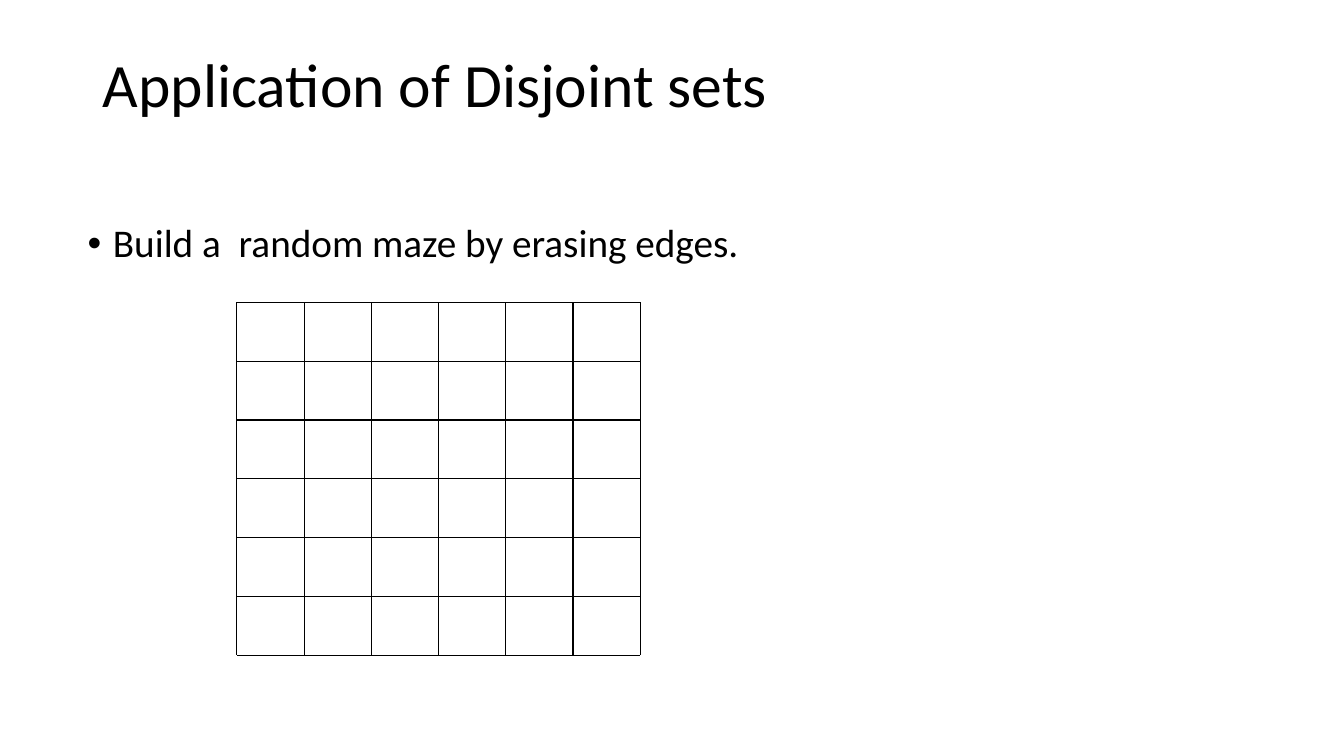
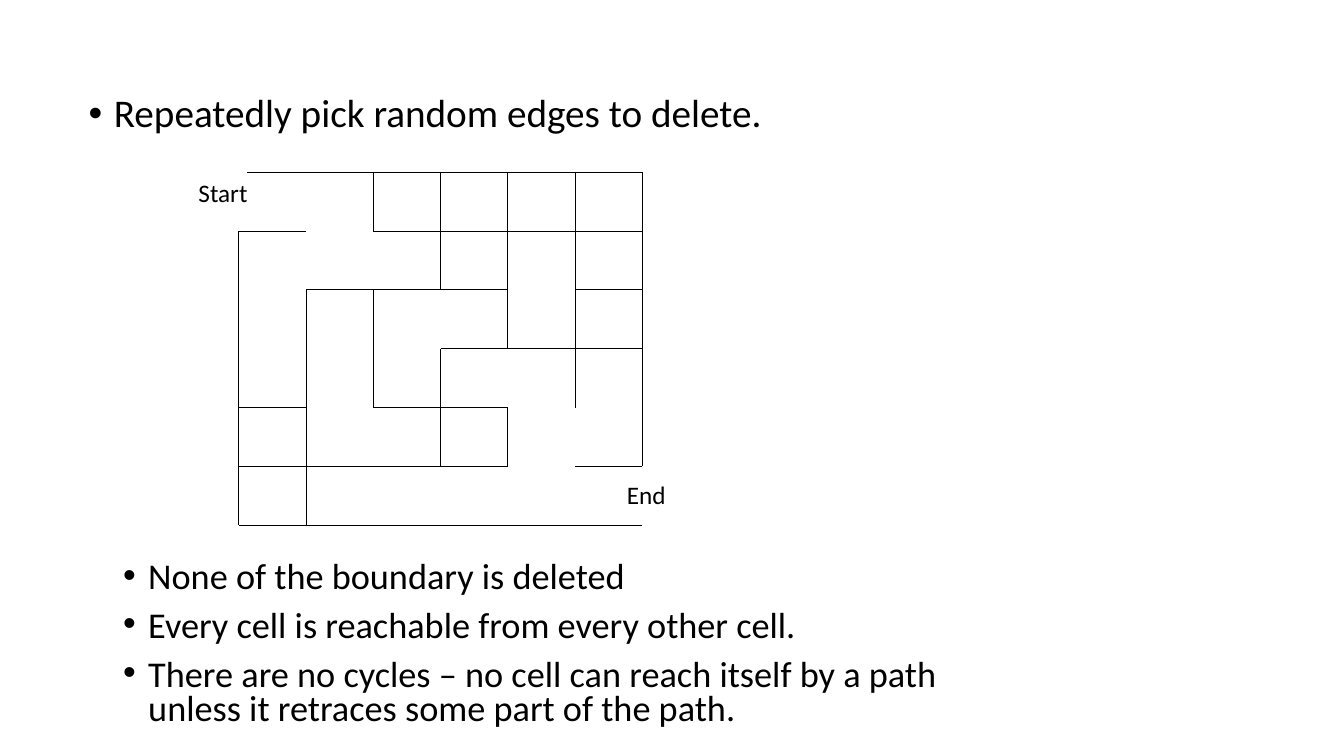
from lxml import etree
from pptx import Presentation
from pptx.dml.color import RGBColor
from pptx.enum import shapes, text
from pptx.oxml import ns
from pptx.util import Inches, Pt

BLACK = RGBColor(0, 0, 0)
FONT = "Calibri"
TITLE_AND_LIST, TWO_LISTS = 1, 3
GRID_SIZE = 6
CELL_WIDTH = 4 / GRID_SIZE
CELL_HEIGHT = 3.5 / GRID_SIZE

# T: top wall, R: right wall, B: both walls, -: no wall
FULL_GRID = ["B" * GRID_SIZE] * GRID_SIZE
MAZE = ["-BBBBB", "T-BBBB", "RBTBRB", "RRRTBB", "B-BB-R", "BTTT-T"]


class Deck:
    def __init__(self):
        self.file = Presentation()
        self.file.slide_width = Inches(13.33)
        self.file.slide_height = Inches(7.5)
        self.page = None

    def add_page(self, layout):
        self.page = self.file.slides.add_slide(self.file.slide_layouts[layout])

    def style(self, paragraph, size):
        paragraph.font.name = FONT
        paragraph.font.size = Pt(size)
        paragraph.font.color.rgb = BLACK

    def place(self, box, left, top, width, height):
        box.left, box.top = Inches(left), Inches(top)
        box.width, box.height = Inches(width), Inches(height)
        box.text_frame.auto_size = text.MSO_AUTO_SIZE.NONE

    def title(self, wording):
        box = self.page.shapes.title
        self.place(box, 0.92, 0.4, 11.5, 0.93)
        box.text_frame.text = wording
        box.text_frame.vertical_anchor = text.MSO_ANCHOR.MIDDLE
        paragraph = box.text_frame.paragraphs[0]
        paragraph.alignment = text.PP_ALIGN.LEFT
        paragraph.line_spacing = 0.9
        self.style(paragraph, 44)

    def drop_title(self):
        element = self.page.shapes.title.element
        element.getparent().remove(element)

    def bullets(self, index, items, left, top, height, size=28, spacing=0.9):
        box = self.page.placeholders[index]
        self.place(box, left, top, 8.5, height)
        box.text_frame.text = "\n".join(items)
        for number, paragraph in enumerate(box.text_frame.paragraphs):
            paragraph.line_spacing = spacing
            paragraph.space_before = Pt(10 if number else 0)
            properties = paragraph._p.get_or_add_pPr()
            properties.set("marL", str(Inches(0.25)))
            properties.set("indent", str(Inches(-0.25)))
            etree.SubElement(properties, ns.qn("a:buChar")).set("char", "•")
            self.style(paragraph, size)

    def label(self, wording, left, top, width):
        box = self.page.shapes.add_textbox(
            Inches(left), Inches(top), Inches(width), Inches(0.43))
        box.text_frame.text = wording
        box.text_frame.word_wrap = False
        box.text_frame.auto_size = text.MSO_AUTO_SIZE.SHAPE_TO_FIT_TEXT
        self.style(box.text_frame.paragraphs[0], 18)

    def line(self, start_x, start_y, end_x, end_y):
        wall = self.page.shapes.add_connector(
            shapes.MSO_CONNECTOR.STRAIGHT,
            Inches(start_x), Inches(start_y), Inches(end_x), Inches(end_y))
        wall.line.color.rgb = BLACK
        wall.line.width = Pt(0.75)
        etree.SubElement(wall._element.spPr, ns.qn("a:effectLst"))

    def walls(self, rows, left, top):
        for row, codes in enumerate(rows):
            for column, code in enumerate(codes):
                x = left + column * CELL_WIDTH
                y = top + row * CELL_HEIGHT
                right = x + CELL_WIDTH
                if code in "TB":
                    self.line(x, y, right, y)
                if code in "RB":
                    self.line(right, y, right, y + CELL_HEIGHT)

    def outline(self, left, top, open_rows=0):
        bottom = top + GRID_SIZE * CELL_HEIGHT
        self.line(left + GRID_SIZE * CELL_WIDTH, bottom, left, bottom)
        self.line(left, bottom, left, top + open_rows * CELL_HEIGHT)


def grid_page(deck):
    deck.add_page(TITLE_AND_LIST)
    deck.title("Application of Disjoint sets")
    deck.bullets(1, ["Build a  random maze by erasing edges."], 0.77, 2.17, 0.58)
    deck.walls(FULL_GRID, 2.35, 3)
    deck.outline(2.35, 3)


def maze_page(deck):
    left, top = 2.37, 1.71
    deck.add_page(TWO_LISTS)
    deck.drop_title()
    deck.bullets(1, ["Repeatedly pick random edges to delete."], 0.78, 0.88, 0.58)
    deck.walls(MAZE, left, top)
    deck.outline(left, top, open_rows=1)
    deck.line(2.45, top, 3.12, top)
    deck.label("Start", 1.87, 1.71, 0.79)
    deck.label("End", 6.12, 4.71, 0.7)
    deck.bullets(2, [
        "None of the boundary is deleted",
        "Every cell is reachable from every other cell.",
        "There are no cycles – no cell can reach itself by a path "
        "unless it retraces some part of the path.",
    ], 1.12, 5.52, 1.88, size=25.9, spacing=0.8)


def main():
    deck = Deck()
    grid_page(deck)
    maze_page(deck)
    deck.file.save("out.pptx")


if __name__ == "__main__":
    main()
